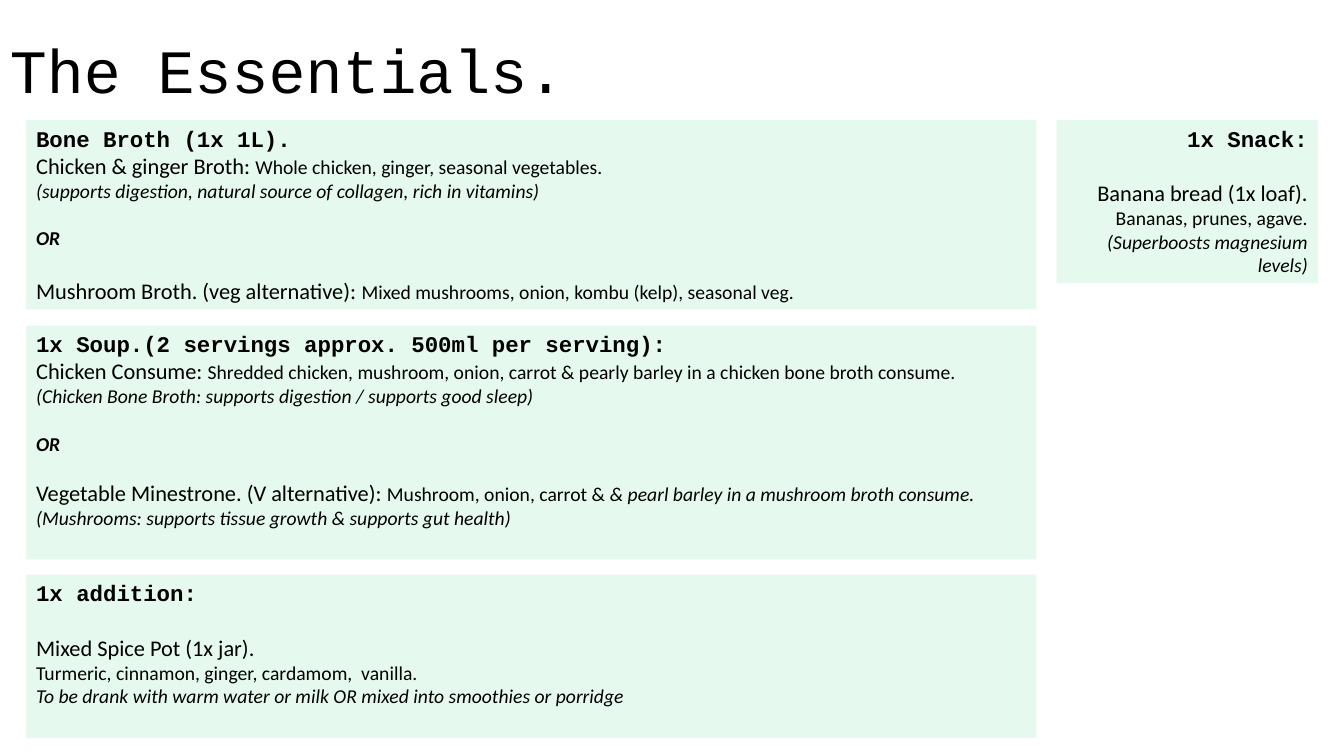
from dataclasses import dataclass

from lxml.etree import SubElement
from pptx import Presentation
from pptx.dml.color import RGBColor
from pptx.enum.shapes import MSO_SHAPE
from pptx.enum.text import MSO_ANCHOR, PP_ALIGN
from pptx.oxml.ns import qn
from pptx.util import Inches, Pt

HEADING_FONT = "Courier New"
BODY_FONT = "Calibri"
TEXT = "000000"
MINT = "00CC66"
MINT_ALPHA = 10
LARGE, SMALL = 16, 14
LARGE_GAP, SMALL_GAP = 19.5, 17


@dataclass(frozen=True)
class Run:
    text: str
    size: int = SMALL
    italic: bool = False


@dataclass(frozen=True)
class Line:
    runs: tuple[Run, ...]
    font: str = BODY_FONT
    bold: bool = False
    before: float = 0


@dataclass(frozen=True)
class Panel:
    left: float
    top: float
    width: float
    height: float
    lines: tuple[Line, ...]
    align: PP_ALIGN = PP_ALIGN.LEFT


def color(value: str) -> RGBColor:
    return RGBColor.from_string(value)


def heading(text: str) -> Line:
    return Line((Run(text, LARGE),), HEADING_FONT, bold=True)


def dish(name: str, *details: Run, before: float = 0) -> Line:
    return Line((Run(name, LARGE), *details), before=before)


def plain(text: str) -> Line:
    return Line((Run(text),))


def note(text: str) -> Line:
    return Line((Run(text, italic=True),))


def either() -> Line:
    return Line((Run("OR", italic=True),), bold=True, before=SMALL_GAP)


def write_line(p, line: Line, align: PP_ALIGN) -> None:
    p.alignment = align
    p.space_before = Pt(line.before)
    p.font.name = line.font
    p.font.bold = line.bold
    p.font.color.rgb = color(TEXT)
    for run in line.runs:
        r = p.add_run()
        r.text = run.text
        r.font.size = Pt(run.size)
        r.font.italic = run.italic


def add_panel(slide, panel: Panel) -> None:
    sp = slide.shapes.add_shape(
        MSO_SHAPE.RECTANGLE, Inches(panel.left), Inches(panel.top),
        Inches(panel.width), Inches(panel.height))
    sp.shadow.inherit = False
    sp.line.fill.background()
    sp.fill.solid()
    sp.fill.fore_color.rgb = color(MINT)
    rgb = sp.fill._xPr.find(qn("a:solidFill")).find(qn("a:srgbClr"))
    SubElement(rgb, qn("a:alpha")).set("val", str(MINT_ALPHA * 1000))
    tf = sp.text_frame
    tf.word_wrap = True
    tf.vertical_anchor = MSO_ANCHOR.TOP
    for i, line in enumerate(panel.lines):
        p = tf.add_paragraph() if i else tf.paragraphs[0]
        write_line(p, line, panel.align)


def add_title(slide, text: str) -> None:
    tb = slide.shapes.add_textbox(0, 0, Inches(11.5), Inches(1.45))
    tf = tb.text_frame
    tf.word_wrap = True
    tf.vertical_anchor = MSO_ANCHOR.MIDDLE
    p = tf.paragraphs[0]
    p.line_spacing = 0.9
    write_line(p, Line((Run(text, 44),), HEADING_FONT), PP_ALIGN.LEFT)


LEFT, WIDTH, TOP = 0.26, 10.02, 1.19

PANELS = (
    Panel(LEFT, TOP, WIDTH, 1.88, (
        heading("Bone Broth (1x 1L)."),
        dish("Chicken & ginger Broth: ",
             Run("Whole chicken, ginger, seasonal vegetables.")),
        note("(supports digestion, natural source of collagen, rich in vitamins)"),
        either(),
        dish("Mushroom Broth. (veg alternative): ",
             Run("Mixed mushrooms, onion, kombu (kelp), seasonal veg."),
             before=LARGE_GAP),
    )),
    Panel(10.48, TOP, 2.59, 1.62, (
        heading("1x Snack:"),
        dish("Banana bread (1x loaf).", before=LARGE_GAP),
        plain("Bananas, prunes, agave."),
        note("(Superboosts magnesium levels)"),
    ), PP_ALIGN.RIGHT),
    Panel(LEFT, 5.7, WIDTH, 1.62, (
        heading("1x addition:"),
        dish("Mixed Spice Pot (1x jar). ", before=LARGE_GAP),
        plain("Turmeric, cinnamon, ginger, cardamom,  vanilla."),
        note("To be drank with warm water or milk OR mixed into smoothies or porridge"),
    )),
    Panel(LEFT, 3.23, WIDTH, 2.32, (
        heading("1x Soup.(2 servings approx. 500ml per serving):"),
        dish("Chicken Consume: ",
             Run("Shredded chicken, mushroom, onion, carrot & pearly barley "
                 "in a chicken bone broth consume.")),
        note("(Chicken Bone Broth: supports digestion / supports good sleep)"),
        either(),
        dish("Vegetable Minestrone. (V alternative): ",
             Run("Mushroom, onion, carrot & "),
             Run("& pearl barley in a mushroom broth consume.", italic=True),
             before=SMALL_GAP),
        note("(Mushrooms: supports tissue growth & supports gut health)"),
    )),
)


def main() -> None:
    prs = Presentation()
    prs.slide_width, prs.slide_height = Inches(13.33), Inches(7.5)
    slide = prs.slides.add_slide(prs.slide_layouts[6])
    for panel in PANELS:
        add_panel(slide, panel)
    add_title(slide, "The Essentials.")
    prs.save("out.pptx")


if __name__ == "__main__":
    main()
